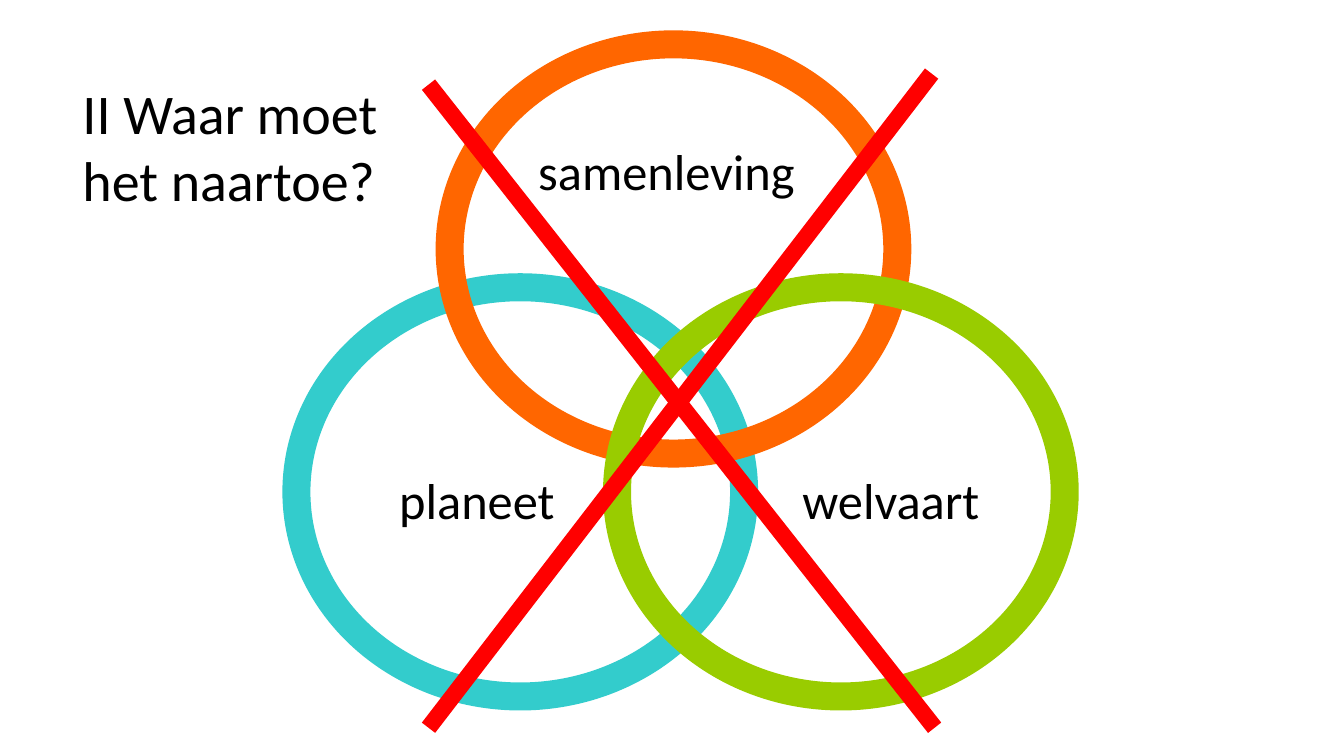
from dataclasses import dataclass

from lxml.etree import SubElement
from pptx import Presentation
from pptx.dml.color import RGBColor
from pptx.enum.shapes import MSO_CONNECTOR, MSO_SHAPE
from pptx.oxml.ns import qn
from pptx.util import Inches, Pt


@dataclass(frozen=True)
class Theme:
    font: str = "Calibri"
    ink: str = "000000"
    planet: str = "33CCCC"
    people: str = "FF6600"
    wealth: str = "99CC00"
    cross: str = "FF0000"
    title: int = 40
    label: int = 36
    ring: int = 20
    stroke: int = 12


THEME = Theme()


def set_line(line, color, width):
    line.color.rgb = RGBColor.from_string(color)
    line.width = Pt(width)


def add_text(slide, box, text, size):
    frame = slide.shapes.add_textbox(*map(Inches, box)).text_frame
    frame.word_wrap = True
    frame.text = text
    for para in frame.paragraphs:
        for run in para.runs:
            run.font.name = THEME.font
            run.font.size = Pt(size)
            run.font.color.rgb = RGBColor.from_string(THEME.ink)


def add_rings(slide, box):
    left, top, width, height = box
    ring_w, ring_h = 4.44, 4.06
    low = top + height - ring_h
    rings = [
        (left, low, THEME.planet),
        (left + 1.52, top, THEME.people),
        (left + width - ring_w, low, THEME.wealth),
    ]
    for x, y, color in rings:
        place = map(Inches, (x, y, ring_w, ring_h))
        ring = slide.shapes.add_shape(MSO_SHAPE.OVAL, *place)
        ring.shadow.inherit = False
        ring.fill.background()
        set_line(ring.line, color, THEME.ring)

    labels = [
        ("samenleving", 2.3, 0.9, 2.76),
        ("welvaart", 4.92, 4.16, 2.07),
        ("planeet", 0.92, 4.16, 1.78),
    ]
    for text, x, y, wide in labels:
        add_text(slide, (left + x, top + y, wide, 0.71), text, THEME.label)


def add_cross(slide, box):
    left, top, width, height = box
    right, base = left + width, top + height
    strokes = [
        (left, top + 0.11, right, base),
        (right - 0.03, top, left, base),
    ]
    for ends in strokes:
        line = slide.shapes.add_connector(MSO_CONNECTOR.STRAIGHT, *map(Inches, ends))
        set_line(line.line, THEME.cross, THEME.stroke)
        SubElement(line._element.spPr, qn("a:effectLst"))


def main():
    deck = Presentation()
    deck.slide_width = Inches(13.33)
    deck.slide_height = Inches(7.5)
    slide = deck.slides.add_slide(deck.slide_layouts[6])
    add_rings(slide, (2.94, 0.44, 7.62, 6.47))
    add_cross(slide, (4.25, 0.73, 5.02, 6.49))
    add_text(slide, (0.72, 0.73, 3.14, 1.45), "II Waar moet\nhet naartoe?", THEME.title)
    deck.save("out.pptx")


if __name__ == "__main__":
    main()
